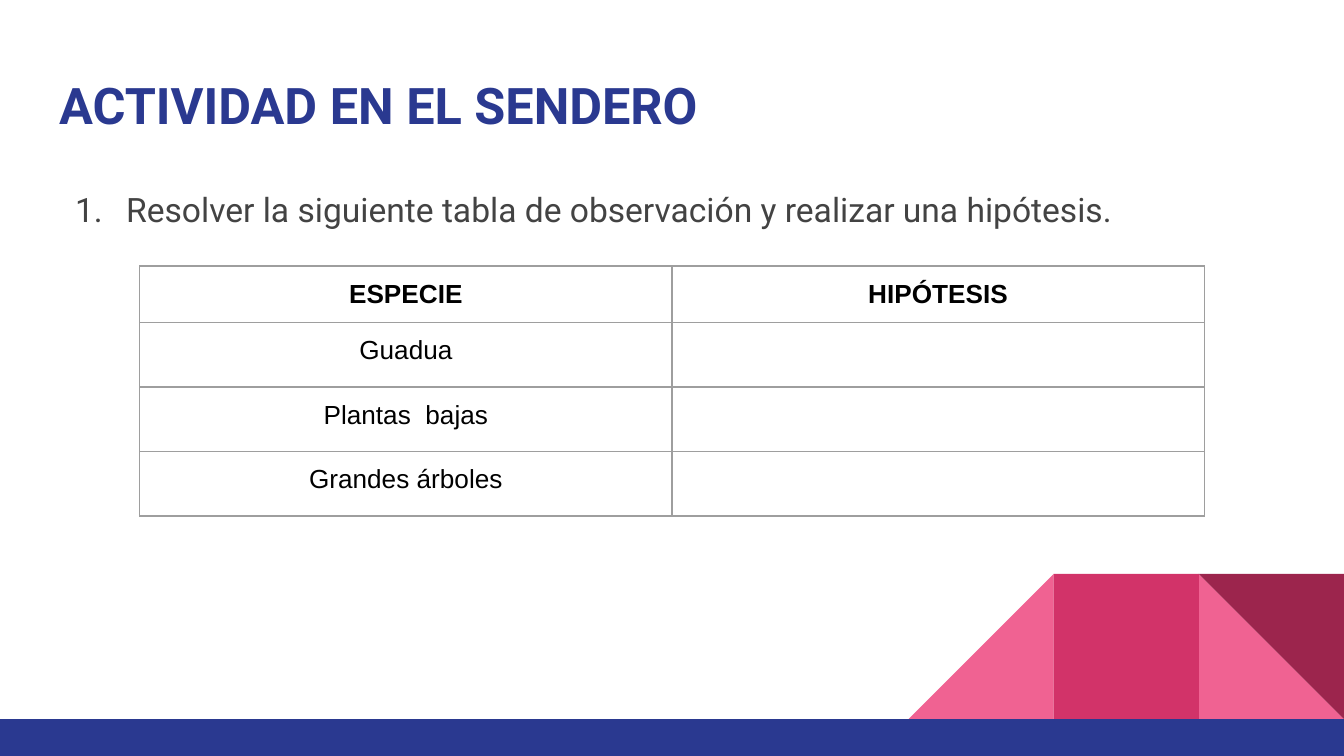
"""Build the trail activity slide with its observation table."""
from lxml import etree
from pptx import Presentation
from pptx import util as u
from pptx.dml.color import RGBColor
from pptx.enum import shapes, text
from pptx.oxml.ns import qn

BLUE = RGBColor(0x2A, 0x39, 0x90)
PINK = RGBColor(0xF0, 0x62, 0x92)
ROSE = RGBColor(0xD2, 0x33, 0x69)
WINE = RGBColor(0x9C, 0x25, 0x4D)
GRAY = RGBColor(0x43, 0x43, 0x43)
BLACK = RGBColor(0, 0, 0)
BORDER = RGBColor(0x9E, 0x9E, 0x9E)

deck = Presentation()
deck.slide_width, deck.slide_height = u.Inches(10), u.Inches(10 * 9 / 16)
page = deck.slides.add_slide(deck.slide_layouts[5])
MARGINS = dict.fromkeys(
    ("margin_left", "margin_top", "margin_right", "margin_bottom"), u.Inches(0.1))
FRAME = {**MARGINS, "word_wrap": True, "auto_size": text.MSO_AUTO_SIZE.NONE,
         "vertical_anchor": text.MSO_ANCHOR.TOP}


def apply(target, values):
    for name, value in values.items():
        setattr(target, name, value)


def write(frame, words, font, size, color, bold=False, align=text.PP_ALIGN.LEFT):
    para = frame.paragraphs[0]
    para.alignment = align
    span = para.add_run()
    span.text = words
    apply(span.font, {"name": font, "size": u.Pt(size), "bold": bold})
    span.font.color.rgb = color
    return para


tile, floor = 1.08, 5.35
triangle, rectangle = shapes.MSO_SHAPE.RIGHT_TRIANGLE, shapes.MSO_SHAPE.RECTANGLE
tiles = [(triangle, 1, 0, PINK), (triangle, 3, 270, PINK),
         (rectangle, 2, 0, ROSE), (triangle, 1, 180, WINE)]
pieces = [(kind, 10 - column * tile, floor - tile, tile, tile, turn, color)
          for kind, column, turn, color in tiles]
pieces.append((rectangle, 0, floor, 10, 0.28, 0, BLUE))
for kind, left, top, width, height, turn, color in pieces:
    piece = page.shapes.add_shape(kind, *map(u.Inches, (left, top, width, height)))
    piece.rotation = turn
    piece.shadow.inherit = False
    piece.fill.solid()
    piece.fill.fore_color.rgb = color
    piece.line.fill.background()

title = page.shapes.title
apply(title, {"left": u.Inches(0.34), "top": u.Inches(0.45),
              "width": u.Inches(9.32), "height": u.Inches(0.66)})
apply(title.text_frame, FRAME)
write(title.text_frame, "ACTIVIDAD EN EL SENDERO", "Roboto", 27, BLUE, True)

task = page.shapes.add_textbox(*map(u.Inches, (0.34, 1.26, 9.32, 0.57)))
apply(task.text_frame, FRAME)
para = write(task.text_frame,
             "Resolver la siguiente tabla de observación y realizar una hipótesis.",
             "Roboto", 18, GRAY)
para.line_spacing = 1.15
layout = para._p.get_or_add_pPr()
layout.set("marL", str(u.Inches(0.5)))
layout.set("indent", str(u.Inches(-0.38)))
bullet_color = etree.SubElement(layout, qn("a:buClr"))
etree.SubElement(bullet_color, qn("a:srgbClr"), val=str(GRAY))
etree.SubElement(layout, qn("a:buFont"), typeface="Roboto")
etree.SubElement(layout, qn("a:buAutoNum"), type="arabicPeriod")

rows = [("ESPECIE", "HIPÓTESIS"), ("Guadua", ""),
        ("Plantas  bajas", ""), ("Grandes árboles", "")]
heights = [0.42] + [0.48] * 3
table = page.shapes.add_table(
    len(rows), 2, *map(u.Inches, (1.04, 1.98, 2 * 3.96, sum(heights)))).table
apply(table, {"first_row": False, "horz_banding": False})
for index, (words, height) in enumerate(zip(rows, heights)):
    table.rows[index].height = u.Inches(height)
    for column, word in enumerate(words):
        cell = table.cell(index, column)
        apply(cell, MARGINS)
        cell.fill.background()
        if word:
            write(cell.text_frame, word, "Arial", 14, BLACK, index == 0,
                  text.PP_ALIGN.CENTER)
        else:
            blank = etree.SubElement(cell.text_frame.paragraphs[0]._p,
                                     qn("a:endParaRPr"), sz="1400")
            etree.SubElement(blank, qn("a:latin"), typeface="Arial")
        properties = cell._tc.get_or_add_tcPr()
        for place, side in enumerate(("lnL", "lnR", "lnT", "lnB")):
            line = etree.Element(qn("a:" + side), w=str(u.Pt(0.75)))
            paint = etree.SubElement(line, qn("a:solidFill"))
            etree.SubElement(paint, qn("a:srgbClr"), val=str(BORDER))
            properties.insert(place, line)

deck.save("out.pptx")
